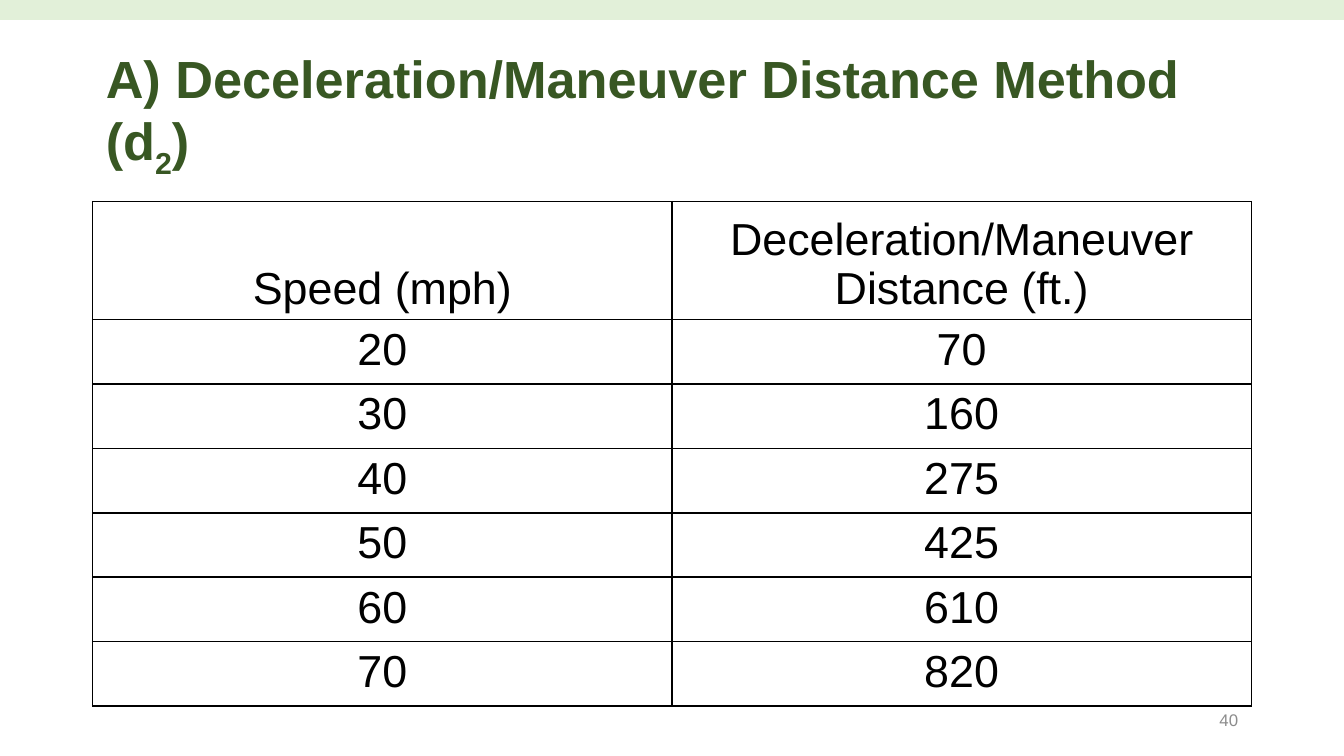
from typing import NamedTuple

from lxml.etree import SubElement
from pptx import Presentation
from pptx.dml.color import RGBColor
from pptx.enum.shapes import MSO_SHAPE as Shape
from pptx.enum.text import MSO_ANCHOR as Anchor, PP_ALIGN as Align
from pptx.oxml.ns import qn
from pptx.util import Cm, Pt

COLORS = {
    "band": "E2F0D9",
    "title": "385723",
    "text": "000000",
    "border": "000000",
    "number": "8C8C8C",
}
FONT = "Arial"
SLIDE_W, SLIDE_H = 25.4, 14.29
LEFT, CONTENT_W = 1.75, 21.9
HEADER_H, ROW_H = 2.17, 1.21


class Box(NamedTuple):
    left: float
    top: float
    width: float
    height: float

    def lengths(self) -> list:
        return [Cm(v) for v in self]


class Style(NamedTuple):
    size: float
    color: str
    bold: bool = False
    align: Align = Align.LEFT
    spacing: float = 1.0


class Reading(NamedTuple):
    speed: str
    distance: str


TITLE = Style(28, "title", bold=True, spacing=0.9)
CELL = Style(24, "text", align=Align.CENTER)
NUMBER = Style(9, "number", align=Align.RIGHT)

HEADER = Reading("Speed (mph)", "Deceleration/Maneuver Distance (ft.)")
READINGS = [
    Reading("20", "70"),
    Reading("30", "160"),
    Reading("40", "275"),
    Reading("50", "425"),
    Reading("60", "610"),
    Reading("70", "820"),
]


def rgb(name: str) -> RGBColor:
    return RGBColor.from_string(COLORS[name])


def add_runs(tf, style: Style, *runs: tuple[str, int]) -> None:
    """Write (text, baseline percent) runs into the first paragraph."""
    p = tf.paragraphs[0]
    p.alignment = style.align
    p.line_spacing = style.spacing
    for text, baseline in runs:
        r = p.add_run()
        r.text = text
        r.font.name = FONT
        r.font.size = Pt(style.size)
        r.font.bold = style.bold
        r.font.color.rgb = rgb(style.color)
        if baseline:
            r.font._element.set("baseline", str(baseline * 1000))


def add_text(s, box: Box, style: Style, *runs: tuple[str, int]) -> None:
    tf = s.shapes.add_textbox(*box.lengths()).text_frame
    tf.word_wrap = True
    tf.vertical_anchor = Anchor.MIDDLE
    add_runs(tf, style, *runs)


def add_band(s, box: Box) -> None:
    sp = s.shapes.add_shape(Shape.RECTANGLE, *box.lengths())
    sp.shadow.inherit = False
    sp.fill.solid()
    sp.fill.fore_color.rgb = rgb("band")
    sp.line.fill.background()


def set_borders(cell, width: float) -> None:
    props = cell._tc.get_or_add_tcPr()
    for i, side in enumerate(("lnL", "lnR", "lnT", "lnB")):
        ln = props.makeelement(qn(f"a:{side}"), {"w": str(Pt(width))})
        fill = SubElement(ln, qn("a:solidFill"))
        SubElement(fill, qn("a:srgbClr"), val=COLORS["border"])
        props.insert(i, ln)


def add_readings_table(s, box: Box, rows: list[Reading]) -> None:
    table = s.shapes.add_table(len(rows), 2, *box.lengths()).table
    table.horz_banding = False
    table.first_row = False
    for column in table.columns:
        column.width = Cm(box.width / 2)
    for i, reading in enumerate(rows):
        table.rows[i].height = Cm(ROW_H if i else HEADER_H)
        for j, text in enumerate(reading):
            cell = table.cell(i, j)
            cell.margin_top = cell.margin_bottom = Cm(0.1)
            cell.vertical_anchor = Anchor.TOP if i else Anchor.BOTTOM
            cell.fill.background()
            set_borders(cell, 1)
            add_runs(cell.text_frame, CELL, (text, 0))


def main() -> None:
    prs = Presentation()
    prs.slide_width, prs.slide_height = Cm(SLIDE_W), Cm(SLIDE_H)
    s = prs.slides.add_slide(prs.slide_layouts[6])

    add_band(s, Box(0, 0, SLIDE_W, 0.38))
    add_text(s, Box(LEFT, 0.76, CONTENT_W, 2.77), TITLE,
             ("A) Deceleration/Maneuver Distance Method (d", 0), ("2", -25), (")", 0))
    table_h = HEADER_H + ROW_H * len(READINGS)
    add_readings_table(s, Box(LEFT, 3.81, CONTENT_W, table_h), [HEADER, *READINGS])
    add_text(s, Box(17.93, 13.23, 5.72, 0.76), NUMBER, ("40", 0))

    prs.save("out.pptx")


if __name__ == "__main__":
    main()
